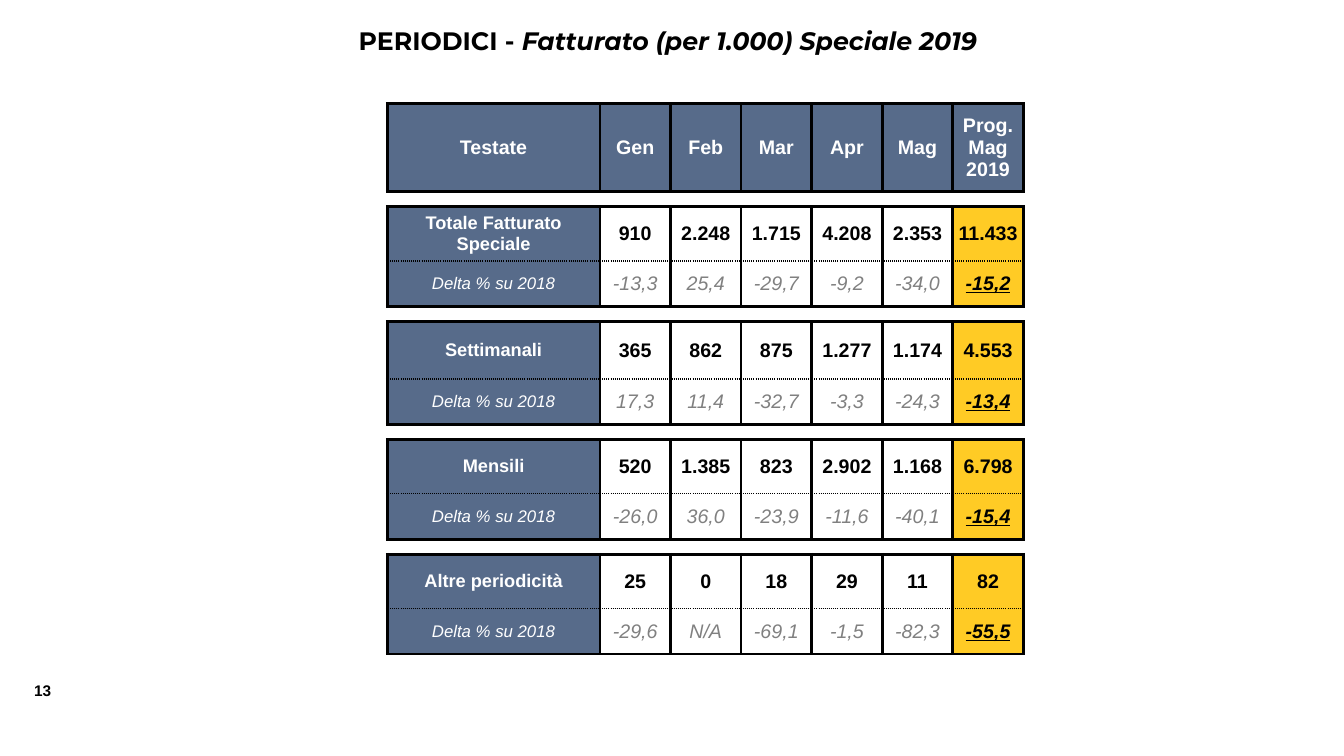
import pptx
import pptx.dml.color
import pptx.enum.text
import pptx.oxml.ns
import pptx.util
from lxml import etree
from pptx.util import Inches


class Theme:
    black, white, grey = "000000", "FFFFFF", "808080"
    blue, yellow = "576B8A", "FFCB25"
    body_font, title_font = "Arial", "Montserrat"
    title_size, value_size, name_size, delta_size, number_size = 18, 14, 13, 12, 11
    gap_size = 4
    thick, dotted = (2.25, "solid"), (1, "sysDot")


CENTER = pptx.enum.text.PP_ALIGN.CENTER
MIDDLE = pptx.enum.text.MSO_ANCHOR.MIDDLE
qn = pptx.oxml.ns.qn


def add_run(para, text, size, color, bold=False, italic=False,
            underline=False, font=Theme.body_font):
    span = para.add_run()
    span.text = text
    span.font.name = font
    span.font.size = pptx.util.Pt(size)
    span.font.bold, span.font.italic, span.font.underline = bold, italic, underline
    span.font.color.rgb = pptx.dml.color.RGBColor.from_string(color)


def format_cell(cell, fill, margins, left, right, top, bottom):
    """Set margins, borders and fill; a border of None is left open."""
    cell.vertical_anchor = MIDDLE
    cell.margin_left = cell.margin_right = Inches(margins[0])
    cell.margin_top = cell.margin_bottom = Inches(margins[1])
    props = cell._tc.get_or_add_tcPr()
    for tag, border in (("a:lnL", left), ("a:lnR", right), ("a:lnT", top), ("a:lnB", bottom)):
        line = etree.SubElement(props, qn(tag))
        if border is None:
            etree.SubElement(line, qn("a:noFill"))
            continue
        line.set("w", str(int(pptx.util.Pt(border[0]))))
        paint = etree.SubElement(line, qn("a:solidFill"))
        etree.SubElement(paint, qn("a:srgbClr"), val=Theme.black)
        etree.SubElement(line, qn("a:prstDash"), val=border[1])
    cell.fill.solid()
    cell.fill.fore_color.rgb = pptx.dml.color.RGBColor.from_string(fill)


deck = pptx.Presentation()
deck.slide_width, deck.slide_height = Inches(13.33), Inches(7.5)
page = deck.slides.add_slide(deck.slide_layouts[5])

# Title
title = page.shapes.title
title.left, title.top, title.width, title.height = (
    Inches(1.9), Inches(0.2), Inches(9.45), Inches(0.4))
title.text_frame.auto_size = pptx.enum.text.MSO_AUTO_SIZE.NONE
title.text_frame.vertical_anchor = MIDDLE
para = title.text_frame.paragraphs[0]
para.alignment = CENTER
for text, italic in (("PERIODICI - ", False), ("Fatturato (per 1.000) Speciale 2019", True)):
    add_run(para, text, Theme.title_size, Theme.black, True, italic, font=Theme.title_font)

# Page number
box = page.shapes.add_textbox(Inches(0.24), Inches(6.71), Inches(0.42), Inches(0.29))
box.text_frame.word_wrap = False
add_run(box.text_frame.paragraphs[0], "13", Theme.number_size, Theme.black, True)

# Revenue data: name, height of the value row, values, change on 2018
months = ["Gen", "Feb", "Mar", "Apr", "Mag"]
groups = [
    ("Totale Fatturato Speciale", 0.54,
     ["910", "2.248", "1.715", "4.208", "2.353", "11.433"],
     ["-13,3", "25,4", "-29,7", "-9,2", "-34,0", "-15,2"]),
    ("Settimanali", 0.57,
     ["365", "862", "875", "1.277", "1.174", "4.553"],
     ["17,3", "11,4", "-32,7", "-3,3", "-24,3", "-13,4"]),
    ("Mensili", 0.54,
     ["520", "1.385", "823", "2.902", "1.168", "6.798"],
     ["-26,0", "36,0", "-23,9", "-11,6", "-40,1", "-15,4"]),
    ("Altre periodicità", 0.54,
     ["25", "0", "18", "29", "11", "82"],
     ["-29,6", "N/A", "-69,1", "-1,5", "-82,3", "-55,5"]),
]
heights = [0.87]
for group in groups:
    heights += [0.15, group[1], 0.45]
widths = [2.11] + [0.7] * 6

# Table grid
table = page.shapes.add_table(len(heights), len(widths), Inches(3.84), Inches(1.03),
                              Inches(sum(widths)), Inches(sum(heights))).table
table.first_row = table.horz_banding = False
for column, width in zip(table.columns, widths):
    column.width = Inches(width)
for row, height in zip(table.rows, heights):
    row.height = Inches(height)

# Header row
for col, label in enumerate(["Testate"] + months + ["Prog."]):
    cell = table.cell(0, col)
    format_cell(cell, Theme.blue, (0.1, 0.05), *[Theme.thick] * 4)
    para = cell.text_frame.paragraphs[0]
    para.alignment = CENTER
    add_run(para, label, Theme.value_size, Theme.white, True)
para.add_line_break()
add_run(para, "Mag", Theme.value_size, Theme.white, True)
para = cell.text_frame.add_paragraph()
para.alignment = CENTER
add_run(para, "2019", Theme.value_size, Theme.white, True)

# One gap, one value row and one delta row per group
for index, (name, _, values, deltas) in enumerate(groups):
    gap_row = 1 + 3 * index
    for col in range(len(widths)):
        cell = table.cell(gap_row, col)
        format_cell(cell, Theme.white, (0, 0), None, None, Theme.thick, Theme.thick)
        etree.SubElement(cell.text_frame.paragraphs[0]._p, qn("a:endParaRPr"),
                         sz=str(Theme.gap_size * 100))

    for offset, texts in enumerate(([name] + values, ["Delta % su 2018"] + deltas), 1):
        is_delta = offset == 2
        top, bottom = ((Theme.dotted, Theme.thick) if is_delta
                       else (Theme.thick, Theme.dotted))
        for col, text in enumerate(texts):
            is_name, is_total = col == 0, col == len(widths) - 1
            cell = table.cell(gap_row + offset, col)
            fill = Theme.blue if is_name else Theme.yellow if is_total else Theme.white
            format_cell(cell, fill, (0.1, 0.05) if is_name else (0, 0),
                        Theme.thick, Theme.thick, top, bottom)
            if is_name:
                size, color = Theme.delta_size if is_delta else Theme.name_size, Theme.white
            else:
                size = Theme.value_size
                color = Theme.grey if is_delta and not is_total else Theme.black
            para = cell.text_frame.paragraphs[0]
            para.alignment = CENTER
            add_run(para, text, size, color, bold=is_total or not is_delta,
                    italic=is_delta, underline=is_delta and is_total)

deck.save("out.pptx")
